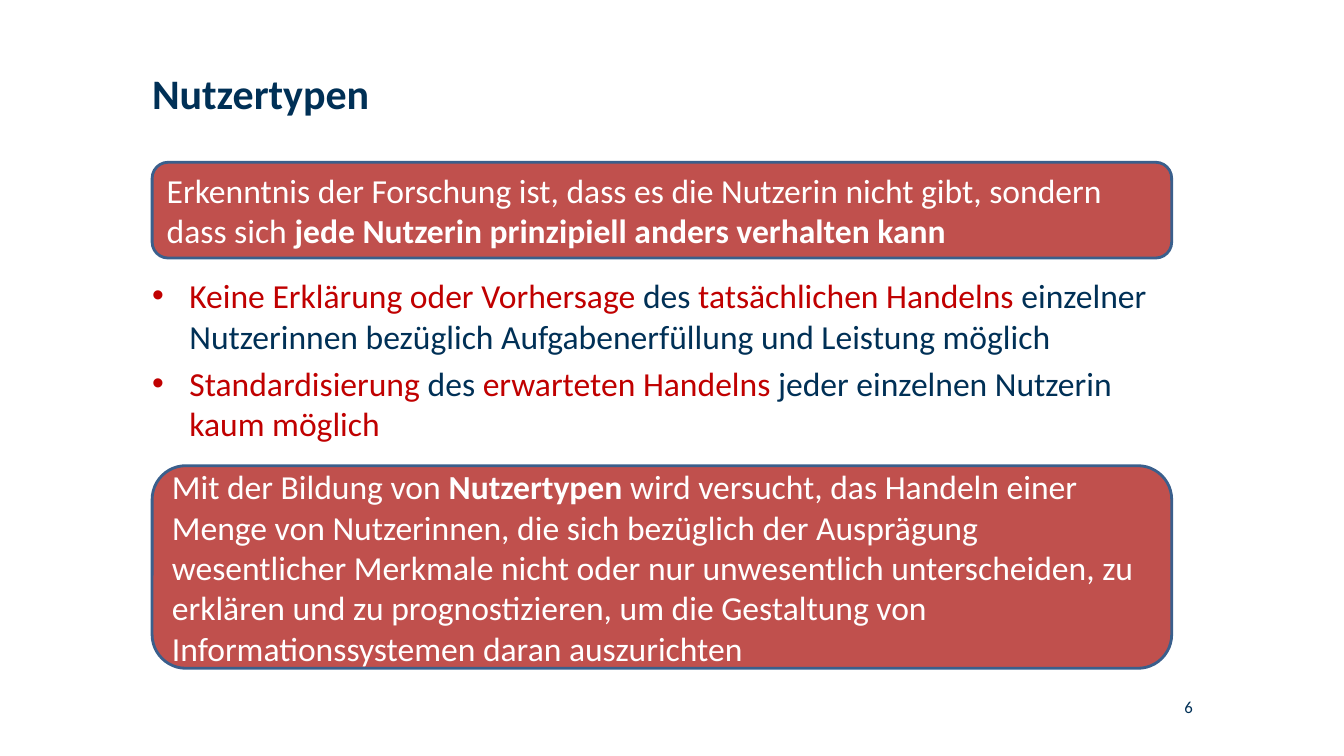
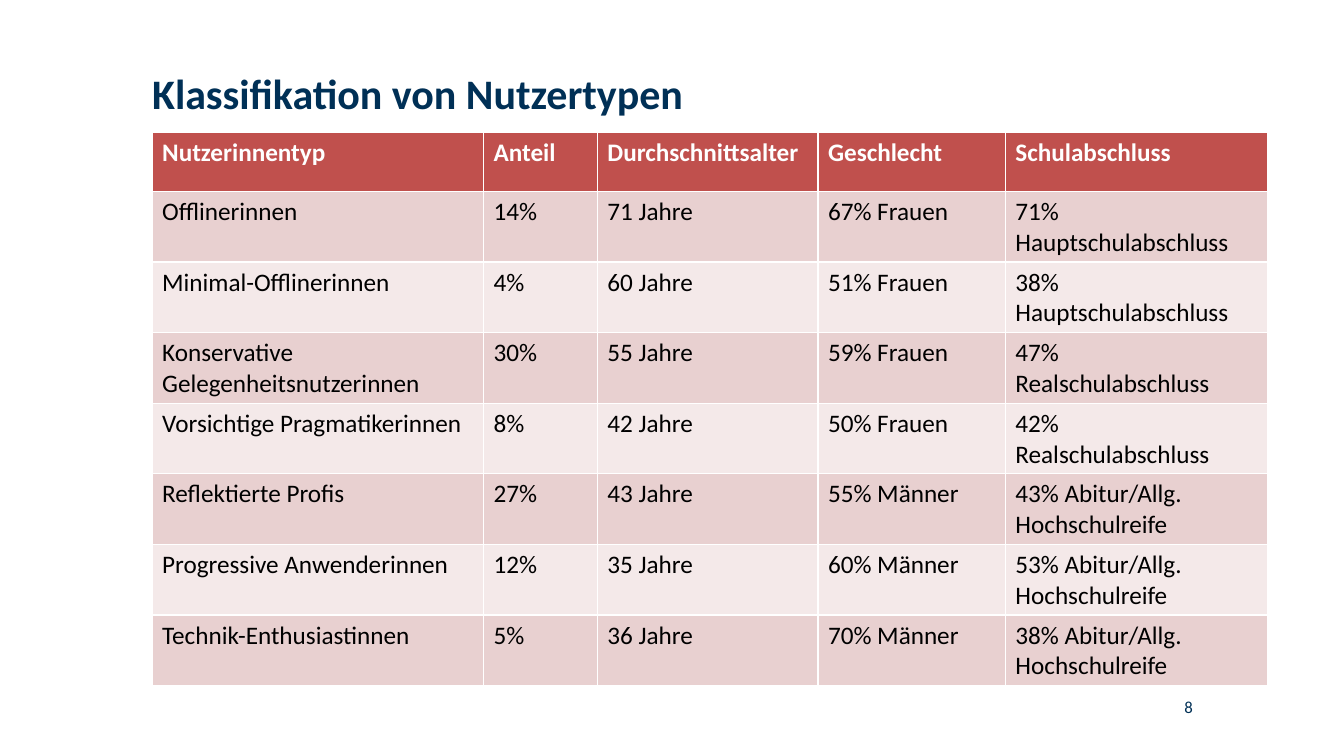
from dataclasses import dataclass

from lxml.etree import SubElement
from pptx import Presentation
from pptx.dml.color import RGBColor
from pptx.enum.shapes import MSO_SHAPE
from pptx.enum.text import MSO_ANCHOR, PP_ALIGN
from pptx.oxml.ns import qn
from pptx.presentation import Presentation as Deck
from pptx.slide import Slide
from pptx.text.text import TextFrame, _Paragraph
from pptx.util import Inches, Pt

NAVY = RGBColor(0x00, 0x30, 0x56)
DARK_RED = RGBColor(0xC0, 0x00, 0x00)
BRICK = RGBColor(0xC0, 0x50, 0x4D)
OUTLINE = RGBColor(0x3A, 0x5F, 0x8C)
ROSE = RGBColor(0xE8, 0xD0, 0xD0)
PALE_ROSE = RGBColor(0xF4, 0xE9, 0xE9)
WHITE = RGBColor(0xFF, 0xFF, 0xFF)
BLACK = RGBColor(0x00, 0x00, 0x00)

FONT = "Calibri"
LEFT = Inches(1.51)


@dataclass(frozen=True)
class Span:
    text: str
    color: RGBColor = WHITE
    bold: bool = False


@dataclass(frozen=True)
class Callout:
    top: float
    height: float
    spans: tuple[Span, ...]


CALLOUTS = (
    Callout(1.61, 0.95, (
        Span("Erkenntnis der Forschung ist, dass es die Nutzerin nicht gibt, sondern dass sich "),
        Span("jede Nutzerin prinzipiell anders verhalten kann", bold=True),
    )),
    Callout(4.62, 2.01, (
        Span("Mit der Bildung von "),
        Span("Nutzertypen", bold=True),
        Span(" wird versucht, das Handeln einer Menge von Nutzerinnen, die sich bezüglich der "
             "Ausprägung wesentlicher Merkmale nicht oder nur unwesentlich unterscheiden, zu "
             "erklären und zu prognostizieren, um die Gestaltung von Informationssystemen "
             "daran auszurichten"),
    )),
)

BULLETS = (
    (
        Span("Keine Erklärung oder Vorhersage ", DARK_RED),
        Span("des ", NAVY),
        Span("tatsächlichen Handelns ", DARK_RED),
        Span("einzelner Nutzerinnen bezüglich Aufgabenerfüllung und Leistung möglich", NAVY),
    ),
    (
        Span("Standardisierung", DARK_RED),
        Span(" des ", NAVY),
        Span("erwarteten Handelns ", DARK_RED),
        Span("jeder einzelnen Nutzerin ", NAVY),
        Span("kaum möglich", DARK_RED),
    ),
)

COL_WIDTHS = (3.29, 1.13, 2.19, 1.86, 2.6)
ROW_HEIGHT = 0.59
ROWS = (
    ("Nutzerinnentyp", "Anteil", "Durchschnittsalter", "Geschlecht", "Schulabschluss"),
    ("Offlinerinnen", "14%", "71 Jahre", "67% Frauen", "71% Hauptschulabschluss"),
    ("Minimal-Offlinerinnen", "4%", "60 Jahre", "51% Frauen", "38% Hauptschulabschluss"),
    ("Konservative Gelegenheitsnutzerinnen", "30%", "55 Jahre", "59% Frauen",
     "47% Realschulabschluss"),
    ("Vorsichtige Pragmatikerinnen", "8%", "42 Jahre", "50% Frauen", "42% Realschulabschluss"),
    ("Reflektierte Profis", "27%", "43 Jahre", "55% Männer", "43% Abitur/Allg. Hochschulreife"),
    ("Progressive Anwenderinnen", "12%", "35 Jahre", "60% Männer",
     "53% Abitur/Allg. Hochschulreife"),
    ("Technik-Enthusiastinnen", "5%", "36 Jahre", "70% Männer",
     "38% Abitur/Allg. Hochschulreife"),
)


def add_text(p: _Paragraph, text: str, *, size: float, color: RGBColor,
             bold: bool = False) -> None:
    r = p.add_run()
    r.text = text
    r.font.name = FONT
    r.font.size = Pt(size)
    r.font.bold = bold
    r.font.color.rgb = color


def add_spans(p: _Paragraph, spans: tuple[Span, ...]) -> None:
    for span in spans:
        add_text(p, span.text, size=24, color=span.color, bold=span.bold)


def clear_insets(tf: TextFrame) -> None:
    tf.margin_left = tf.margin_top = tf.margin_right = tf.margin_bottom = 0
    tf.vertical_anchor = MSO_ANCHOR.TOP
    tf.word_wrap = True


def add_slide(prs: Deck, title: str, number: int) -> Slide:
    s = prs.slides.add_slide(prs.slide_layouts[5])
    sp = s.shapes.title
    sp.left, sp.top, sp.width, sp.height = LEFT, Inches(0.67), Inches(7.06), Inches(1.37)
    clear_insets(sp.text_frame)
    p = sp.text_frame.paragraphs[0]
    p.alignment = PP_ALIGN.LEFT
    add_text(p, title, size=30, color=NAVY, bold=True)

    sp = s.shapes.add_textbox(Inches(10.3), Inches(6.91), Inches(1.54), Inches(0.2))
    clear_insets(sp.text_frame)
    p = sp.text_frame.paragraphs[0]
    p.alignment = PP_ALIGN.RIGHT
    add_text(p, str(number), size=12, color=NAVY)
    return s


def add_callout(s: Slide, callout: Callout) -> None:
    sp = s.shapes.add_shape(MSO_SHAPE.ROUNDED_RECTANGLE, LEFT, Inches(callout.top),
                            Inches(10.12), Inches(callout.height))
    sp.shadow.inherit = False
    sp.fill.solid()
    sp.fill.fore_color.rgb = BRICK
    sp.line.color.rgb = OUTLINE
    sp.line.width = Pt(2)
    tf = sp.text_frame
    tf.word_wrap = True
    tf.vertical_anchor = MSO_ANCHOR.MIDDLE
    p = tf.paragraphs[0]
    p.alignment = PP_ALIGN.LEFT
    add_spans(p, callout.spans)


def add_bullets(s: Slide) -> None:
    sp = s.shapes.add_textbox(LEFT, Inches(2.73), Inches(10.31), Inches(1.84))
    tf = sp.text_frame
    clear_insets(tf)
    for i, spans in enumerate(BULLETS):
        p = tf.add_paragraph() if i else tf.paragraphs[0]
        pPr = p._p.get_or_add_pPr()
        pPr.set("marL", str(Inches(0.37)))
        pPr.set("indent", str(-Inches(0.37)))
        color = SubElement(pPr, qn("a:buClr"))
        SubElement(color, qn("a:srgbClr"), val=str(DARK_RED))
        SubElement(pPr, qn("a:buFont"), typeface="Arial")
        SubElement(pPr, qn("a:buChar"), char="•")
        if i:
            p.space_before = Pt(4.8)
        add_spans(p, spans)


def add_user_table(s: Slide) -> None:
    table = s.shapes.add_table(len(ROWS), len(COL_WIDTHS), LEFT, Inches(1.31),
                               Inches(sum(COL_WIDTHS)), Inches(ROW_HEIGHT * len(ROWS))).table
    for column, width in zip(table.columns, COL_WIDTHS):
        column.width = Inches(width)
    for i, row in enumerate(ROWS):
        table.rows[i].height = Inches(ROW_HEIGHT)
        header = i == 0
        fill = BRICK if header else ROSE if i % 2 else PALE_ROSE
        for j, text in enumerate(row):
            cell = table.cell(i, j)
            cell.fill.solid()
            cell.fill.fore_color.rgb = fill
            add_text(cell.text_frame.paragraphs[0], text, size=18,
                     color=WHITE if header else BLACK, bold=header)


def main() -> None:
    prs = Presentation()
    prs.slide_width, prs.slide_height = Inches(13.34), Inches(7.5)

    s = add_slide(prs, "Nutzertypen", 6)
    add_bullets(s)
    for callout in CALLOUTS:
        add_callout(s, callout)

    s = add_slide(prs, "Klassifikation von Nutzertypen", 8)
    add_user_table(s)

    prs.save("out.pptx")


if __name__ == "__main__":
    main()
